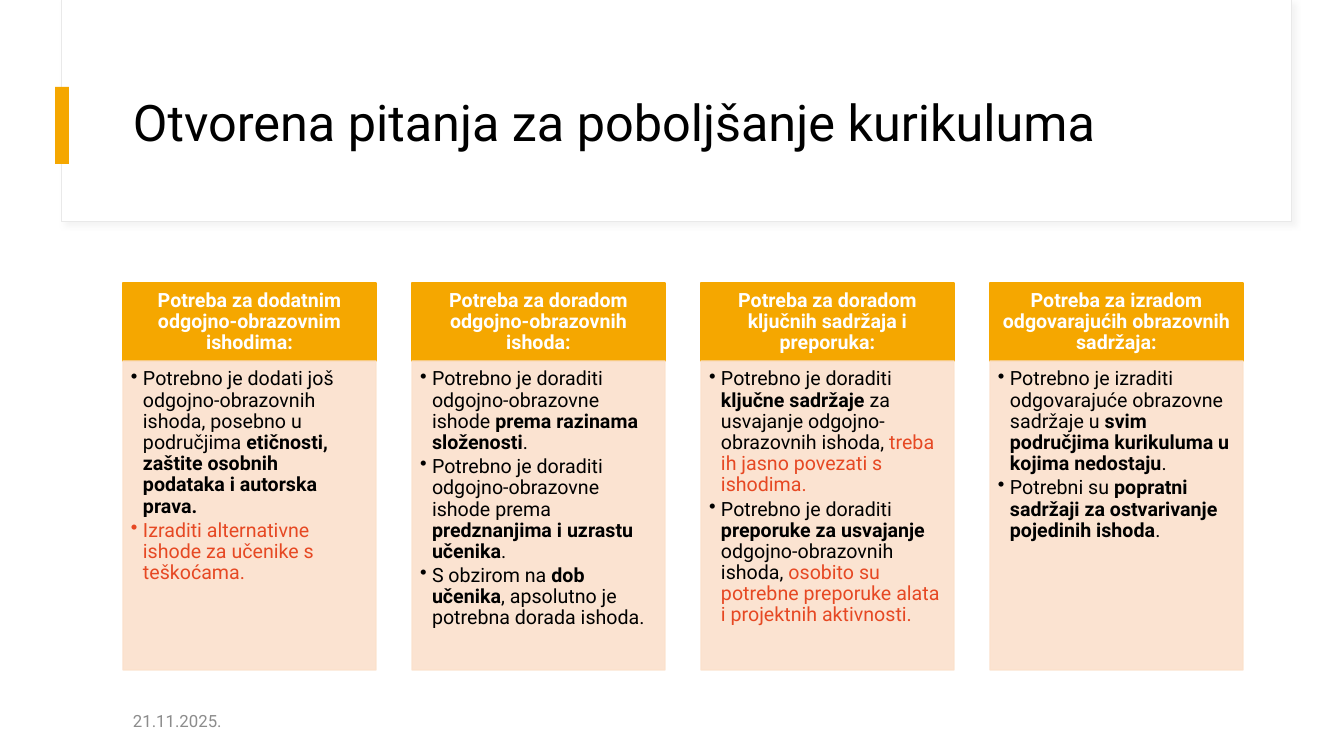
from dataclasses import dataclass

from lxml.etree import SubElement
from pptx import Presentation
from pptx.dml.color import RGBColor
from pptx.enum.shapes import MSO_SHAPE
from pptx.enum.text import MSO_ANCHOR, MSO_AUTO_SIZE, PP_ALIGN
from pptx.oxml.ns import qn
from pptx.util import Pt

PX = 914400 / 100.8


@dataclass(frozen=True)
class Theme:
    font: str = "Roboto"
    paper: str = "FFFFFF"
    accent: str = "F5A700"
    panel: str = "FBE1CC"
    ink: str = "000000"
    alert: str = "E64823"
    muted: str = "8C8C8C"
    frame: str = "E9E9E9"
    shade: str = "D9D9D9"
    title_size: int = 36
    text_size: int = 14
    date_size: int = 12


THEME = Theme()

TITLE = "Otvorena pitanja za poboljšanje kurikuluma"
DATE = "21.11.2025."

# Each bullet is a list of (text, style) runs.
PLAIN, BOLD, ALERT = "plain", "bold", "alert"
TOPICS = [
    ("Potreba za dodatnim odgojno-obrazovnim ishodima:", [
        [("Potrebno je dodati još odgojno-obrazovnih ishoda, posebno u područjima ", PLAIN),
         ("etičnosti, zaštite osobnih podataka i autorska prava.", BOLD)],
        [("Izraditi alternativne ishode za učenike s teškoćama.", ALERT)],
    ]),
    ("Potreba za doradom odgojno-obrazovnih ishoda:", [
        [("Potrebno je doraditi odgojno-obrazovne ishode ", PLAIN),
         ("prema razinama složenosti", BOLD), (".", PLAIN)],
        [("Potrebno je doraditi odgojno-obrazovne ishode prema ", PLAIN),
         ("predznanjima i uzrastu učenika", BOLD), (".", PLAIN)],
        [("S obzirom na ", PLAIN), ("dob učenika", BOLD),
         (", apsolutno je potrebna dorada ishoda.", PLAIN)],
    ]),
    ("Potreba za doradom ključnih sadržaja i preporuka:", [
        [("Potrebno je doraditi ", PLAIN), ("ključne sadržaje", BOLD),
         (" za usvajanje odgojno-obrazovnih ishoda, ", PLAIN),
         ("treba ih jasno povezati s ishodima.", ALERT)],
        [("Potrebno je doraditi ", PLAIN), ("preporuke za usvajanje", BOLD),
         (" odgojno-obrazovnih ishoda, ", PLAIN),
         ("osobito su potrebne preporuke alata i projektnih aktivnosti.", ALERT)],
    ]),
    ("Potreba za izradom odgovarajućih obrazovnih sadržaja:", [
        [("Potrebno je izraditi odgovarajuće obrazovne sadržaje u ", PLAIN),
         ("svim područjima kurikuluma u kojima nedostaju", BOLD), (".", PLAIN)],
        [("Potrebni su ", PLAIN),
         ("popratni sadržaji za ostvarivanje pojedinih ishoda", BOLD), (".", PLAIN)],
    ]),
]


def px(*lengths):
    return [round(length * PX) for length in lengths]


def rgb(color):
    return RGBColor.from_string(color)


def set_font(font, size, color, bold=False):
    font.name, font.size, font.bold = THEME.font, Pt(size), bold
    font.color.rgb = rgb(color)


def set_frame(frame, insets, anchor):
    frame.word_wrap = True
    frame.auto_size = MSO_AUTO_SIZE.NONE
    frame.vertical_anchor = anchor
    (frame.margin_left, frame.margin_top,
     frame.margin_right, frame.margin_bottom) = px(*insets)


def add_block(slide, box, fill, line=None, line_width=1):
    block = slide.shapes.add_shape(MSO_SHAPE.RECTANGLE, *px(*box))
    block.shadow.inherit = False
    block.fill.solid()
    block.fill.fore_color.rgb = rgb(fill)
    if line:
        block.line.color.rgb = rgb(line)
        block.line.width = Pt(line_width)
    else:
        block.line.fill.background()
    return block


def set_opacity(block, percent):
    """Apply one opacity to both fill and outline."""
    for color in block.element.spPr.iter(qn("a:srgbClr")):
        SubElement(color, qn("a:alpha"), val=str(percent * 1000))


def add_soft_shadow(block):
    effects = block.element.spPr.find(qn("a:effectLst"))
    shadow = SubElement(effects, qn("a:outerShdw"), blurRad=str(Pt(4)),
                        dist=str(Pt(3)), dir=str(45 * 60000), algn="tl", rotWithShape="0")
    color = SubElement(shadow, qn("a:srgbClr"), val=THEME.shade)
    SubElement(color, qn("a:alpha"), val="30000")


def add_bullet(paragraph, indent):
    properties = paragraph._p.get_or_add_pPr()
    properties.set("marL", str(indent))
    properties.set("indent", str(-indent))
    SubElement(properties, qn("a:buChar"), char="•")


def add_header(slide, box):
    left, top, width, height = box
    add_soft_shadow(add_block(slide, box, THEME.paper, THEME.frame, 0.75))
    add_block(slide, (left - 7, top + 87, 14, 77), THEME.accent)

    title = slide.shapes.title
    title.element.getparent().append(title.element)  # in front of the frame
    title.left, title.top, title.width, title.height = px(left + 61, top + 60, 1121, 130)
    title.text_frame.text = TITLE
    set_frame(title.text_frame, (10, 5, 10, 5), MSO_ANCHOR.MIDDLE)
    heading = title.text_frame.paragraphs[0]
    heading.alignment = PP_ALIGN.LEFT
    heading.line_spacing = 0.9
    set_font(heading.font, THEME.title_size, THEME.ink)


def add_topic(slide, box, heading, bullets):
    left, top, width, height = box
    head_height = 78

    head = add_block(slide, (left, top, width, head_height), THEME.accent, THEME.accent)
    set_frame(head.text_frame, (11, 6, 11, 6), MSO_ANCHOR.MIDDLE)
    label = head.text_frame.paragraphs[0]
    label.text = heading
    label.alignment = PP_ALIGN.CENTER
    label.line_spacing = 0.9
    set_font(label.font, THEME.text_size, THEME.paper, True)

    body = add_block(slide, (left, top + head_height, width, height - head_height),
                     THEME.panel, THEME.panel)
    set_opacity(body, 90)
    set_frame(body.text_frame, (8, 8, 11, 12), MSO_ANCHOR.TOP)
    for number, runs in enumerate(bullets):
        point = body.text_frame.add_paragraph() if number else body.text_frame.paragraphs[0]
        point.alignment = PP_ALIGN.LEFT
        point.line_spacing = 0.9
        point.space_after = Pt(2.1)
        add_bullet(point, *px(12))
        all_alert = all(style == ALERT for _, style in runs)
        set_font(point.font, THEME.text_size, THEME.alert if all_alert else THEME.ink)
        for text, style in runs:
            run = point.add_run()
            run.text = text
            set_font(run.font, THEME.text_size,
                     THEME.alert if style == ALERT else THEME.ink, style == BOLD)


def add_topics(slide, box, topic_width=253):
    left, top, width, height = box
    pitch = (width - topic_width) / (len(TOPICS) - 1)
    for column, (heading, bullets) in enumerate(TOPICS):
        add_topic(slide, (left + column * pitch, top, topic_width, height), heading, bullets)


def add_date(slide, box):
    date = slide.shapes.add_textbox(*px(*box)).text_frame
    set_frame(date, (10, 5, 10, 5), MSO_ANCHOR.MIDDLE)
    date.text = DATE
    date.paragraphs[0].space_after = Pt(6)
    set_font(date.paragraphs[0].font, THEME.date_size, THEME.muted)


def main():
    deck = Presentation()
    deck.slide_width, deck.slide_height = px(1344, 756)
    slide = deck.slides.add_slide(deck.slide_layouts.get_by_name("Title Only"))
    add_header(slide, (62, 0, 1230, 222))
    add_topics(slide, (123, 283, 1120, 387))
    add_date(slide, (123, 701, 302, 40))
    deck.save("out.pptx")


if __name__ == "__main__":
    main()
